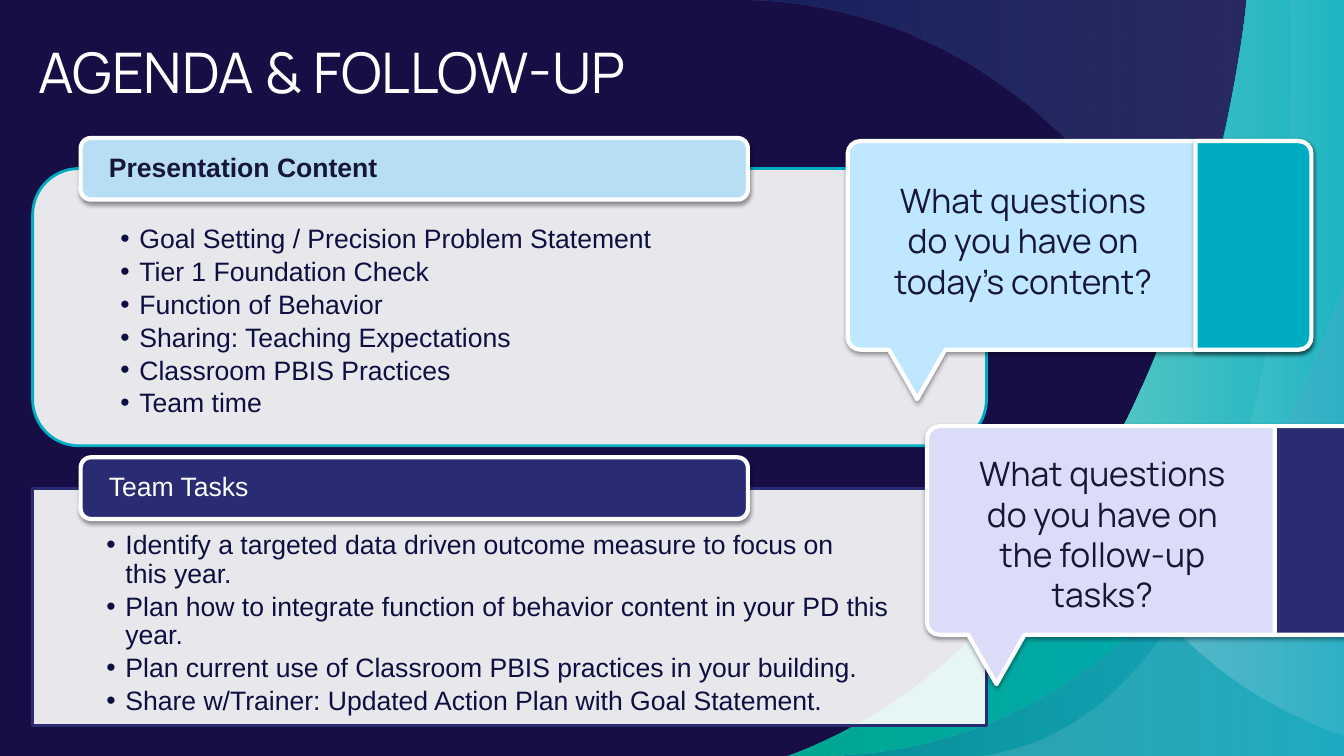
import pptx
import pptx.util
import pptx.dml.color
import pptx.enum.shapes
import pptx.enum.text
import pptx.oxml
import pptx.oxml.ns
from lxml import etree

Pt = pptx.util.Pt
qn = pptx.oxml.ns.qn
ALIGN = pptx.enum.text.PP_ALIGN
ANCHOR = pptx.enum.text.MSO_ANCHOR
PRESET = pptx.enum.shapes.MSO_SHAPE

COLORS = {
    "night": "160E44", "ink": "0D0F41", "dark": "15163A", "shade": "12102F",
    "white": "FFFFFF", "black": "000000", "teal": "00ACC2", "green": "00A791",
    "mist": "8AAFDC", "blue": "114CA0", "indigo": "292C73",
    "sky": "B7DEF4", "ice": "BFE7FF", "lilac": "DBDCF8",
}

# Content
TITLE = "AGENDA & FOLLOW-UP"
SECTIONS = [
    dict(heading="Presentation Content", bold=True, ink="dark", tab="sky",
         border="teal", preset=PRESET.ROUNDED_RECTANGLE, panel=(23.3, 120.4, 681.3, 198),
         inset=10, tab_top=98.6, items=[
             "Goal Setting / Precision Problem Statement",
             "Tier 1 Foundation Check",
             "Function of Behavior",
             "Sharing: Teaching Expectations",
             "Classroom PBIS Practices",
             "Team time"]),
    dict(heading="Team Tasks", bold=False, ink="white", tab="indigo",
         border="indigo", preset=PRESET.RECTANGLE, panel=(23.3, 348.8, 681.3, 169.6),
         inset=0, tab_top=326.7, items=[
             "Identify a targeted data driven outcome measure to focus on this\u00a0year.",
             "Plan how to integrate function of behavior content in your PD this year.",
             "Plan current use of Classroom PBIS practices in your building.",
             "Share w/Trainer: Updated Action Plan with Goal Statement."]),
]
CALLOUTS = [
    dict(text="What questions do you have on today’s content?", origin=(605.5, 100.8),
         fill="ice", strip="teal", strip_shadow=True, text_top=23.8, text_height=94.3),
    dict(text="What questions do you have on the follow-up tasks?", origin=(662.1, 304.4),
         fill="lilac", strip="indigo", strip_shadow=False, text_top=15.1, text_height=123.8),
]

# Backdrop outlines: pairs are corners, sixes are Bezier curves;
# each stop, left to right, is a colour and its opacity in percent
BACKDROP = [
    ([(947.5, 540), (947.5, 540, 894.2, 0, 520.6, 0), (965.5, 0), (965.5, 540)],
     [("blue", 29), ("mist", 18)]),
    ([(1024.6, 0), (1024.6, 540), (562.3, 540), (851, 434.9, 909.4, 0, 909.4, 0)],
     [("shade", 54)]),
    ([(562.3, 540), (1024.6, 540), (1024.6, 0), (890.6, 0),
      (890.6, 0, 873.4, 190.8, 777.6, 349.9), (728.6, 431.3, 659.5, 504.7, 562.3, 540)],
     [("green", 100), ("teal", 100)]),
    ([(777.6, 349.9), (846, 528.5, 1024.6, 540, 1024.6, 540), (1024.6, 0), (890.6, 0),
      (890.6, 0, 873.4, 190.8, 777.6, 349.9)],
     [("white", 36), ("white", 0)]),
    ([(921.6, 0), (921.6, 0, 946.1, 503.3, 701.3, 540), (1024.6, 540), (1024.6, 0)],
     [("white", 18), ("white", 0)]),
    ([(1006.6, 0), (1006.6, 0, 953.3, 540, 579.6, 540), (1024.6, 540), (1024.6, 0)],
     [("blue", 29), ("mist", 18)]),
]

presentation = pptx.Presentation()
presentation.slide_width, presentation.slide_height = Pt(960), Pt(540)
slide = presentation.slides.add_slide(presentation.slide_layouts.get_by_name("Comparison"))


def rgb(name):
    return pptx.dml.color.RGBColor.from_string(COLORS[name])


def set_alpha(color_element, percent):
    alpha = etree.SubElement(color_element, qn("a:alpha"))
    alpha.set("val", str(percent * 1000))


def paint(shape, stops, border=None, width=3, shadow=False):
    """Fill with one colour or a left-to-right gradient, then line and shadow."""
    if len(stops) == 1:
        shape.fill.solid()
        shape.fill.fore_color.rgb = rgb(stops[0][0])
    else:
        shape.fill.gradient()
        shape.fill.gradient_angle = 0
        for stop, (name, _) in zip(shape.fill.gradient_stops, stops):
            stop.color.rgb = rgb(name)
    properties = shape._element.spPr
    for element, (_, percent) in zip(list(properties.iter(qn("a:srgbClr"))), stops):
        if percent < 100:
            set_alpha(element, percent)
    if border:
        shape.line.color.rgb = rgb(border)
        shape.line.width = Pt(width)
    else:
        shape.line.fill.background()
    shape.shadow.inherit = False
    if shadow:
        effects = properties.find(qn("a:effectLst"))
        outer = etree.SubElement(effects, qn("a:outerShdw"), blurRad=str(Pt(3.1)),
                                 dist=str(Pt(1.6)), dir="5400000", algn="t", rotWithShape="0")
        color = etree.SubElement(outer, qn("a:srgbClr"), val=COLORS["black"])
        set_alpha(color, 38)


def draw_outline(outline, origin=(0, 0)):
    """Build the outline through its end points, then bend the curved segments."""
    def place(x, y):
        return Pt(origin[0] + x), Pt(origin[1] + y)

    builder = slide.shapes.build_freeform(*place(*outline[0]))
    builder.add_line_segments([place(*segment[-2:]) for segment in outline[1:]], close=True)
    shape = builder.convert_to_shape()
    lines = list(shape._element.iter(qn("a:lnTo")))
    for line, segment in zip(lines, outline[1:]):
        if len(segment) == 6:
            curve = etree.Element(qn("a:cubicBezTo"))
            for index in (0, 2, 4):
                x, y = place(*segment[index:index + 2])
                etree.SubElement(curve, qn("a:pt"), x=str(x - shape.left), y=str(y - shape.top))
            line.getparent().replace(line, curve)
    return shape


def add_box(preset, box):
    return slide.shapes.add_shape(preset, *map(Pt, box))


def write(shape, box, lines, size, font, color, insets, anchor, align=ALIGN.LEFT,
          bold=False, spacing=1.0, bullets=False):
    """Place a text shape on top of what is drawn so far and fill it."""
    slide.shapes._spTree.append(shape._element)
    shape.left, shape.top, shape.width, shape.height = map(Pt, box)
    frame = shape.text_frame
    frame.word_wrap = True
    frame.auto_size = pptx.enum.text.MSO_AUTO_SIZE.NONE
    frame.vertical_anchor = anchor
    frame.margin_left, frame.margin_top, frame.margin_right, frame.margin_bottom = map(Pt, insets)
    frame.text = "\n".join(lines)
    for paragraph in frame.paragraphs:
        if bullets:
            paragraph.level = 1
            properties = paragraph._p.get_or_add_pPr()
            properties.set("marL", str(Pt(13.7)))
            properties.set("indent", str(-Pt(13.7)))
            etree.SubElement(properties, qn("a:buChar"), char="•")
        paragraph.alignment = align
        paragraph.line_spacing = spacing
        paragraph.space_before = Pt(0)
        paragraph.space_after = Pt(2.9 if bullets else 0)
        paragraph.font.size = Pt(size)
        paragraph.font.name = font
        paragraph.font.bold = bold
        paragraph.font.color.rgb = rgb(color)


# Background and sweeping curves
slide.background.fill.solid()
slide.background.fill.fore_color.rgb = rgb("night")
for outline, stops in BACKDROP:
    paint(draw_outline(outline), stops)

# Agenda panels with heading tabs
_, *section_placeholders = slide.placeholders
for number, section in enumerate(SECTIONS):
    heading, body = section_placeholders[2 * number:2 * number + 2]
    left, top, width, height = section["panel"]
    inset = section["inset"]
    paint(add_box(section["preset"], section["panel"]), [("white", 90)], section["border"], 2)
    write(body, (left + inset, top + inset, width - 2 * inset, height - 2 * inset),
          section["items"], 19, "Arial", "ink", (52.6, 31, 52.6, 10.8), ANCHOR.TOP,
          spacing=0.9, bullets=True)
    tab_top = section["tab_top"]
    paint(add_box(PRESET.ROUNDED_RECTANGLE, (57.6, tab_top, 476.6, 44)),
          [(section["tab"], 100)], "white", shadow=True)
    write(heading, (59.8, tab_top + 2.2, 472.3, 39.6), [section["heading"]], 19, "Arial",
          section["ink"], (18, 0, 18, 0), ANCHOR.MIDDLE, bold=section["bold"], spacing=0.9)

# Title
write(slide.shapes.title, (18, 17.6, 756.7, 66.2), [TITLE], 40, "Manrope", "white",
      (9.4, 9.4, 9.4, 9.4), ANCHOR.MIDDLE)

# Question callouts with a coloured end strip
WIDTH, HEIGHT, RADIUS, STRIP = 331.2, 149, 9, 248.4
right_end = [(WIDTH - RADIUS, 0), (WIDTH - 4, 0, WIDTH, 4, WIDTH, RADIUS),
             (WIDTH, HEIGHT - RADIUS),
             (WIDTH, HEIGHT - 4, WIDTH - 4, HEIGHT, WIDTH - RADIUS, HEIGHT)]
bubble = right_end + [(69.8, HEIGHT), (49.7, HEIGHT + 35.3), (29.5, HEIGHT), (RADIUS, HEIGHT),
                      (4, HEIGHT, 0, HEIGHT - 4, 0, HEIGHT - RADIUS), (0, RADIUS),
                      (0, 4, 4, 0, RADIUS, 0)]
strip = right_end + [(STRIP, HEIGHT), (STRIP, 0)]
for callout in CALLOUTS:
    left, top = callout["origin"]
    paint(draw_outline(bubble, (left, top)), [(callout["fill"], 100)], "white", shadow=True)
    paint(draw_outline(strip, (left, top)), [(callout["strip"], 100)], "white",
          shadow=callout["strip_shadow"])
    box = (left + 15.8, top + callout["text_top"], 218.9, callout["text_height"])
    write(slide.shapes.add_textbox(*map(Pt, box)), box, [callout["text"]], 24, "Manrope",
          "dark", (7.2, 3.6, 7.2, 3.6), ANCHOR.MIDDLE, ALIGN.CENTER)

presentation.save("out.pptx")
